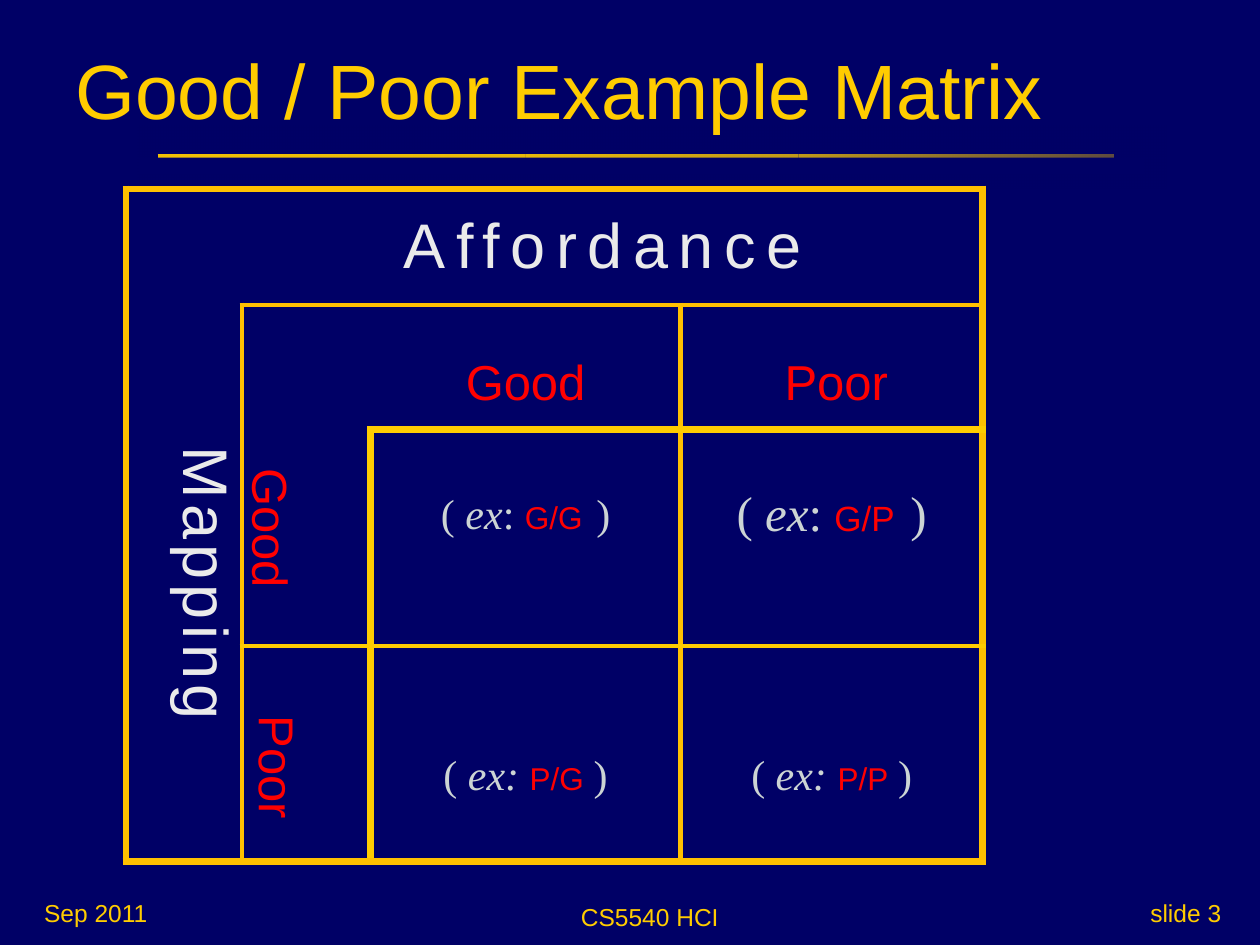
from lxml import etree
from pptx import Presentation
from pptx import util as u
from pptx.dml.color import RGBColor
from pptx.enum import shapes, text
from pptx.oxml.ns import qn

NAVY = RGBColor(0x00, 0x00, 0x66)
GOLD = RGBColor(0xFF, 0xCC, 0x00)
AMBER = RGBColor(0xFF, 0xC0, 0x00)
RED = RGBColor(0xFF, 0x00, 0x00)
PALE = RGBColor(0xEA, 0xEA, 0xEA)
GREY = RGBColor(0xCC, 0xD4, 0xD4)
SANS, SERIF = "Arial", "Times New Roman"
LEFT, CENTER, RIGHT = text.PP_ALIGN.LEFT, text.PP_ALIGN.CENTER, text.PP_ALIGN.RIGHT
TOP, MIDDLE, BOTTOM = text.MSO_ANCHOR.TOP, text.MSO_ANCHOR.MIDDLE, text.MSO_ANCHOR.BOTTOM
NO_STYLE = "{2D5ABB26-0587-4C30-8999-92F81FD0307C}"


class MatrixSlide:
    def __init__(self, deck):
        self.slide = deck.slides.add_slide(deck.slide_layouts[6])
        background = self.slide.background.fill
        background.solid()
        background.fore_color.rgb = NAVY

    def style(self, run, size, color, font=SANS, italic=False, spacing=0):
        run.font.size = u.Pt(size)
        run.font.name = font
        run.font.italic = italic
        run.font.color.rgb = color
        if spacing:
            run.font._element.set("spc", str(spacing * 100))

    def label(self, words, box, size, align, anchor):
        frame = self.slide.shapes.add_textbox(*map(u.Cm, box)).text_frame
        frame.word_wrap = True
        frame.vertical_anchor = anchor
        frame.text = words
        frame.paragraphs[0].alignment = align
        self.style(frame.paragraphs[0].runs[0], size, GOLD)

    def underline(self, left, right, y):
        rule = self.slide.shapes.add_connector(
            shapes.MSO_CONNECTOR.STRAIGHT, u.Cm(left), u.Cm(y), u.Cm(right), u.Cm(y))
        rule.line.color.rgb = GOLD
        rule.line.width = u.Pt(4.5)
        etree.SubElement(rule._element.spPr, qn("a:effectLst"))

    def mask(self, box, opacities=None):
        cover = self.slide.shapes.add_shape(shapes.MSO_SHAPE.RECTANGLE, *map(u.Cm, box))
        cover.shadow.inherit = False
        cover.line.fill.background()
        if not opacities:
            cover.fill.solid()
            cover.fill.fore_color.rgb = NAVY
            return
        cover.fill.gradient()
        cover.fill.gradient_angle = 0
        for stop in cover.fill.gradient_stops:
            stop.color.rgb = NAVY
        for tint, opacity in zip(cover._element.spPr.iter(qn("a:srgbClr")), opacities):
            etree.SubElement(tint, qn("a:alpha"), val=str(opacity * 1000))

    def matrix(self, left, top, widths, heights, merges):
        frame = self.slide.shapes.add_table(
            len(heights), len(widths), u.Cm(left), u.Cm(top),
            u.Cm(sum(widths)), u.Cm(sum(heights)))
        self.table = frame.table
        self.table.first_row = self.table.horz_banding = False
        self.table._tbl.tblPr.find(qn("a:tableStyleId")).text = NO_STYLE
        for column, width in zip(self.table.columns, widths):
            column.width = u.Cm(width)
        for row, height in zip(self.table.rows, heights):
            row.height = u.Cm(height)
        for cell in self.table.iter_cells():
            cell.fill.background()
            cell.margin_left = cell.margin_right = 0
            cell.margin_top = cell.margin_bottom = 0
        for first, last in merges:
            self.table.cell(*first).merge(self.table.cell(*last))

    def rule_grid(self, uprights, levels):
        for row in range(len(self.table.rows)):
            for column in range(len(self.table.columns)):
                cell = self.table.cell(row, column)
                wide = cell.span_width if cell.is_merge_origin else 1
                high = cell.span_height if cell.is_merge_origin else 1
                for side, rules, position, along in (
                        ("L", uprights, column, row),
                        ("R", uprights, column + wide, row),
                        ("T", levels, row, column),
                        ("B", levels, row + high, column)):
                    start, color, width = rules.get(position, (99, None, 0))
                    self.border(cell, side, color if along >= start else None, width)

    def border(self, cell, side, color, width):
        line = etree.Element(qn("a:ln" + side), w=str(int(u.Pt(width))))
        if color is None:
            etree.SubElement(line, qn("a:noFill"))
        else:
            fill = etree.SubElement(line, qn("a:solidFill"))
            etree.SubElement(fill, qn("a:srgbClr"), val=str(color))
        cell._tc.tcPr[-1].addprevious(line)

    def heading(self, at, words, size, color, anchor, insets, spacing=0, vertical=False):
        cell = self.table.cell(*at)
        cell.text_frame.text = words
        cell.vertical_anchor = anchor
        (cell.margin_left, cell.margin_top,
         cell.margin_right, cell.margin_bottom) = map(u.Cm, insets)
        if vertical:
            cell._tc.tcPr.set("vert", "vert")
        paragraph = cell.text_frame.paragraphs[0]
        paragraph.alignment = CENTER
        paragraph.space_before = u.Pt(size * 0.2)
        self.style(paragraph.runs[0], size, color, spacing=spacing)

    def example(self, at, pieces):
        cell = self.table.cell(*at)
        cell.vertical_anchor = MIDDLE
        cell.margin_left = cell.margin_right = u.Cm(0.25)
        cell.margin_top = cell.margin_bottom = u.Cm(0.13)
        paragraph = cell.text_frame.paragraphs[0]
        paragraph.alignment = CENTER
        paragraph.line_spacing = 0.93
        paragraph.space_before = u.Pt(6)
        for words, *look in pieces:
            run = paragraph.add_run()
            run.text = words
            self.style(run, *look)


def good_mapping(code, size, code_size, gap_size):
    return [("( ", size, GREY, SERIF), ("ex", size, GREY, SERIF, True),
            (": ", size, GREY, SERIF), (code, code_size, RED),
            (" ", gap_size, RED), (")", size, GREY, SERIF)]


def poor_mapping(code):
    return [("(", 24, GREY, SERIF), (" ex: ", 24, GREY, SERIF, True),
            (code, 18, RED), (" ", 20, RED), (")", 24, GREY, SERIF)]


def main():
    deck = Presentation()
    deck.slide_width, deck.slide_height = u.Cm(25.4), u.Cm(19.05)
    page = MatrixSlide(deck)

    page.label("CS5540 HCI", (9.86, 18.01, 6.48, 0.89), 14, CENTER, BOTTOM)
    page.label("slide 3", (21.82, 17.98, 3.05, 0.84), 14, RIGHT, BOTTOM)
    page.underline(3.18, 22.45, 3.18)
    page.mask((16.1, 2.54, 7.42, 1.27), (25, 70))
    page.mask((10.59, 2.54, 5.51, 1.27), (10, 25))
    page.mask((2.77, 2.54, 7.82, 1.27), (5, 10))
    page.mask((2.79, 3.18, 20.27, 0.33))
    page.label("Good / Poor Example Matrix", (1.27, 0.2, 23.06, 3.18), 44, LEFT, MIDDLE)

    pairs = [((row, column), (row, column + 1)) for row in range(2, 6) for column in (2, 4)]
    page.matrix(2.54, 3.81, (2.34, 2.59, 5.87, 0.38, 0.71, 5.38),
                (2.34, 2.51, 3.4, 0.96, 0.96, 3.38),
                [((0, 1), (0, 5)), ((1, 0), (5, 0)), ((2, 1), (3, 1))] + pairs)
    page.rule_grid(
        uprights={0: (0, AMBER, 4.5), 1: (1, AMBER, 3), 2: (2, GOLD, 4.5),
                  4: (1, AMBER, 3), 6: (0, AMBER, 4.5)},
        levels={0: (0, AMBER, 4.5), 1: (1, AMBER, 3), 2: (2, GOLD, 4.5),
                4: (1, GOLD, 2.25), 6: (0, AMBER, 4.5)})

    page.heading((0, 1), "Affordance", 36, PALE, MIDDLE, (0.25, 0, 0.64, 0), 6)
    page.heading((1, 0), "Mapping", 36, PALE, TOP, (0.25, 0, 0.25, 0.88), 3, True)
    page.heading((1, 2), "Good", 28, RED, BOTTOM, (0.38, 0, 0, 0.38))
    page.heading((1, 5), "Poor ", 28, RED, BOTTOM, (0, 0, 0.25, 0.38))
    page.heading((2, 1), "Good", 28, RED, TOP, (0.25, 0, 0.64, 0), vertical=True)
    page.heading((5, 1), "Poor", 28, RED, TOP, (0.25, 0.13, 0.64, 0.13), vertical=True)

    page.example((2, 2), good_mapping("G/G", 24, 18, 28))
    page.example((2, 4), good_mapping("G/P", 28, 20, 32))
    page.example((5, 2), poor_mapping("P/G"))
    page.example((5, 4), poor_mapping("P/P"))

    page.label("Sep 2011", (0.64, 17.98, 4.88, 0.84), 14, LEFT, TOP)
    deck.save("out.pptx")


if __name__ == "__main__":
    main()
